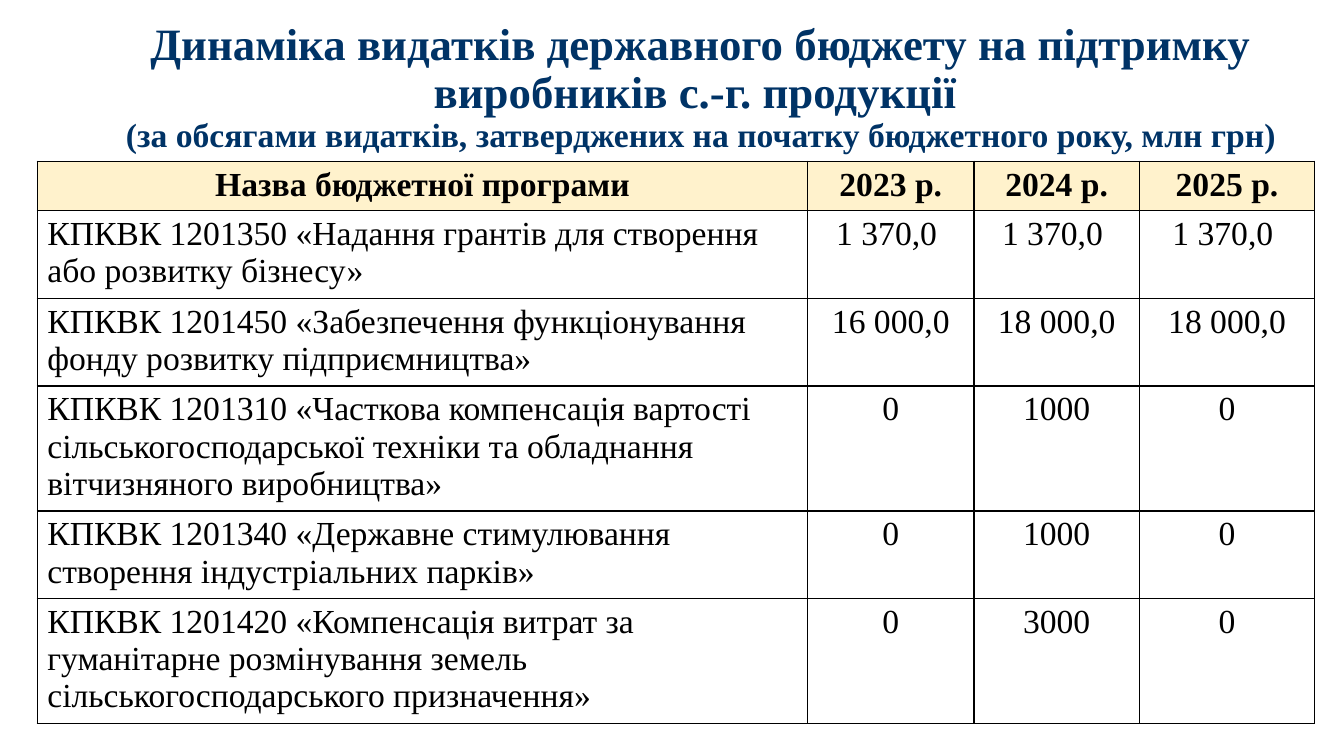
from lxml.etree import SubElement
from pptx import Presentation
from pptx.dml.color import RGBColor
from pptx.enum.text import MSO_ANCHOR, MSO_AUTO_SIZE, PP_ALIGN
from pptx.oxml.ns import qn
from pptx.util import Inches, Pt

COLORS = {"title": "003366", "text": "000000", "border": "000000",
          "header": "FFF2CC", "body": "FFFFFF"}
FONT = "Times New Roman"
TITLE_BOX = (0.94, 0.15, 12.02, 1.45)
TABLE_BOX = (0.37, 1.6, 12.68, 5.58)
COLUMN_WIDTHS = (7.64, 1.65, 1.64, 1.74)
ROW_HEIGHTS = (0.49, 0.87, 0.87, 1.24, 0.87, 1.24)

TITLE = "Динаміка видатків державного бюджету на підтримку виробників с.-г. продукції "
SUBTITLE = "(за обсягами видатків, затверджених на початку бюджетного року, млн грн)"
PROGRAMS = (
    ("Назва бюджетної програми", "2023 р.", "2024 р.", "2025 р."),
    ("КПКВК 1201350 «Надання грантів для створення або розвитку бізнесу»",
     "1 370,0 ", "1 370,0 ", "1 370,0 "),
    ("КПКВК 1201450 «Забезпечення функціонування фонду розвитку підприємництва»",
     "16 000,0", "18 000,0", "18 000,0"),
    ("КПКВК 1201310 «Часткова компенсація вартості сільськогосподарської техніки "
     "та обладнання вітчизняного виробництва»", "0", "1000", "0"),
    ("КПКВК 1201340 «Державне стимулювання створення індустріальних парків»",
     "0", "1000", "0"),
    ("КПКВК 1201420 «Компенсація витрат за гуманітарне розмінування земель "
     "сільськогосподарського призначення»", "0", "3000", "0"),
)


def add_span(para, text, size, color, bold):
    span = para.add_run()
    span.text = text
    span.font.color.rgb = RGBColor.from_string(COLORS[color])
    for name, value in {"name": FONT, "size": Pt(size), "bold": bold}.items():
        setattr(span.font, name, value)


def add_title(page, box):
    title = page.shapes.title
    for name, value in zip(("left", "top", "width", "height"), box):
        setattr(title, name, Inches(value))
    frame = title.text_frame
    frame_format = {"word_wrap": True, "auto_size": MSO_AUTO_SIZE.NONE,
                    "vertical_anchor": MSO_ANCHOR.MIDDLE}
    for name, value in frame_format.items():
        setattr(frame, name, value)
    para = frame.paragraphs[0]
    para.alignment = PP_ALIGN.CENTER
    para.line_spacing = 0.9
    add_span(para, TITLE, 32, "title", True)
    para.add_line_break()
    add_span(para, SUBTITLE, 24, "title", True)


def add_borders(cell):
    properties = cell._tc.get_or_add_tcPr()
    for side in ("lnL", "lnR", "lnT", "lnB"):
        line = SubElement(properties, qn(f"a:{side}"), w=str(Pt(1)))
        fill = SubElement(line, qn("a:solidFill"))
        SubElement(fill, qn("a:srgbClr"), val=COLORS["border"])


def add_program_table(page, box):
    table = page.shapes.add_table(len(ROW_HEIGHTS), len(COLUMN_WIDTHS),
                                  *map(Inches, box)).table
    table.horz_banding = False
    for column, width in zip(table.columns, COLUMN_WIDTHS):
        column.width = Inches(width)
    for row_index, (row, height) in enumerate(zip(table.rows, ROW_HEIGHTS)):
        row.height = Inches(height)
        is_header = row_index == 0
        for column_index, cell in enumerate(row.cells):
            add_borders(cell)
            cell.fill.solid()
            fill_name = "header" if is_header else "body"
            cell.fill.fore_color.rgb = RGBColor.from_string(COLORS[fill_name])
            para = cell.text_frame.paragraphs[0]
            centred = is_header or column_index > 0
            para.alignment = PP_ALIGN.CENTER if centred else PP_ALIGN.LEFT
            add_span(para, PROGRAMS[row_index][column_index], 24, "text", is_header)


def main():
    deck = Presentation()
    deck.slide_width, deck.slide_height = Inches(13.33), Inches(7.5)
    page = deck.slides.add_slide(deck.slide_layouts.get_by_name("Title Only"))
    add_title(page, TITLE_BOX)
    add_program_table(page, TABLE_BOX)
    deck.save("out.pptx")


if __name__ == "__main__":
    main()
